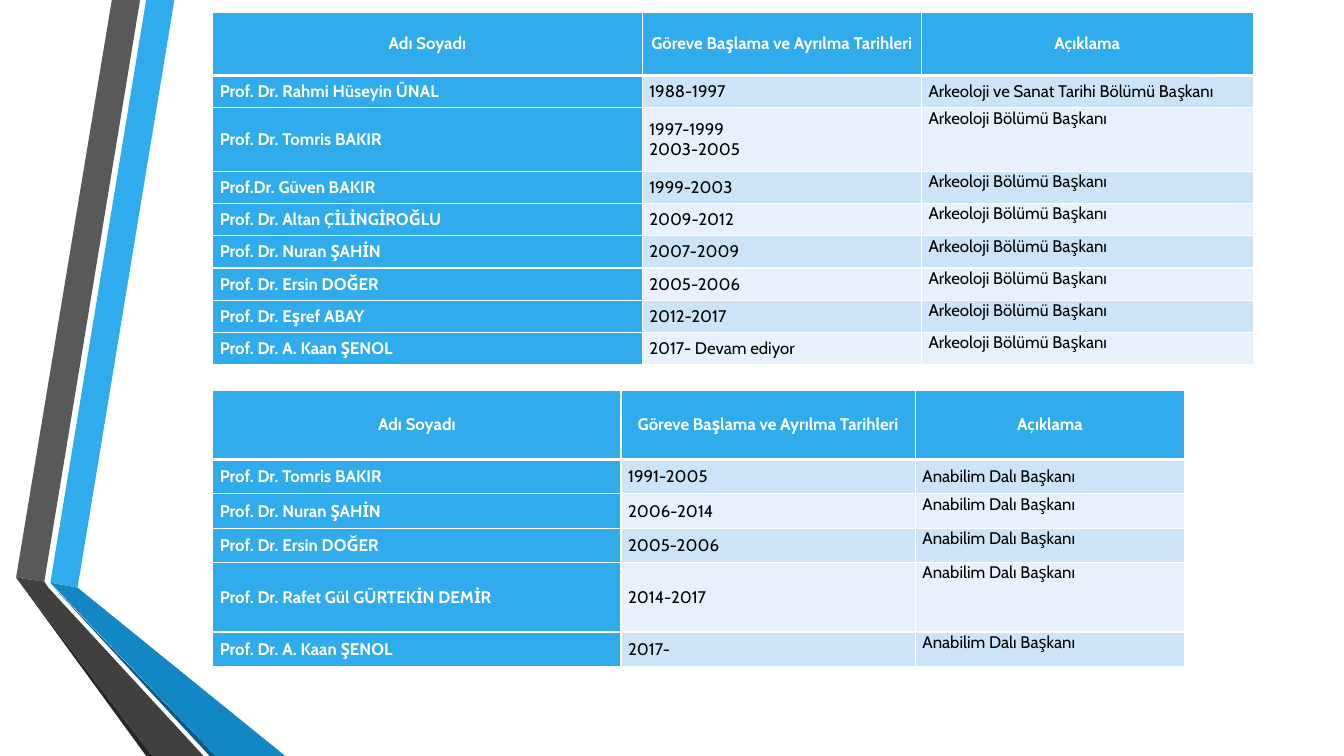
"""Build a slide with two tables of department and division heads."""
from lxml import etree
from pptx import Presentation
from pptx import util as u
from pptx.dml.color import RGBColor
from pptx.enum import text
from pptx.oxml import ns

THEME = dict(font="Cabin", size=12, after=6, inset=0.07, rule=1, header_rule=3,
             accent="30ACEC", bands=("CDE3F8", "E8F1FB"), light="FFFFFF", dark="000000")

RIBBONS = [
    ("30ACEC", [(0.5, 5.78), (0.77, 5.83), (1.73, 0), (1.45, 0)]),
    ("595959", [(1.39, 0), (1.11, 0), (0.16, 5.73), (0.44, 5.77)]),
    ("262626", [(0.16, 5.73), (1.45, 7.5), (1.51, 7.5)]),
    ("0C5A82", [(0.5, 5.79), (2.08, 7.5), (2.14, 7.5)]),
    ("1287C3", [(0.5, 5.78), (2.14, 7.5), (2.83, 7.5), (0.77, 5.83)]),
    ("404040", [(2.02, 7.5), (0.48, 5.83), (0.44, 5.77), (0.16, 5.73), (1.51, 7.5)]),
]

HEADER = ("Adı Soyadı", "Göreve Başlama ve Ayrılma Tarihleri", "Açıklama")
DEPARTMENT = "Arkeoloji Bölümü Başkanı"
DIVISION = "Anabilim Dalı Başkanı"
TABLES = [
    dict(left=2.11, top=0.12, cols=(4.26, 2.77, 3.29), row=0.32, tall_row=0.63, tall=(0, 2), rows=[
        HEADER,
        ("Prof. Dr. Rahmi Hüseyin ÜNAL", "1988-1997", "Arkeoloji ve Sanat Tarihi Bölümü Başkanı"),
        ("Prof. Dr. Tomris BAKIR", "1997-1999\n2003-2005", DEPARTMENT),
        ("Prof.Dr. Güven BAKIR", "1999-2003", DEPARTMENT),
        ("Prof. Dr. Altan ÇİLİNGİROĞLU", "2009-2012", DEPARTMENT),
        ("Prof. Dr. Nuran ŞAHİN", "2007-2009", DEPARTMENT),
        ("Prof. Dr. Ersin DOĞER", "2005-2006", DEPARTMENT),
        ("Prof. Dr. Eşref ABAY", "2012-2017", DEPARTMENT),
        ("Prof. Dr. A. Kaan ŞENOL", "2017- Devam ediyor", DEPARTMENT),
    ]),
    dict(left=2.11, top=3.87, cols=(4.05, 2.92, 2.67), row=0.34, tall_row=0.69, tall=(0, 4), rows=[
        HEADER,
        ("Prof. Dr. Tomris BAKIR", "1991-2005", DIVISION),
        ("Prof. Dr. Nuran ŞAHİN", "2006-2014", DIVISION),
        ("Prof. Dr. Ersin DOĞER", "2005-2006", DIVISION),
        ("Prof. Dr. Rafet Gül GÜRTEKİN DEMİR", "2014-2017", DIVISION),
        ("Prof. Dr. A. Kaan ŞENOL", "2017-", DIVISION),
    ]),
]


def set_all(obj, values):
    for name, value in values.items():
        setattr(obj, name, value)


def paint(fill, color):
    fill.solid()
    fill.fore_color.rgb = RGBColor.from_string(color)


def add_ribbon(s, color, points):
    start, *rest = [(u.Inches(x), u.Inches(y)) for x, y in points]
    builder = s.shapes.build_freeform(*start)
    builder.add_line_segments(rest, close=True)
    sp = builder.convert_to_shape()
    sp.shadow.inherit = False
    sp.line.fill.background()
    paint(sp.fill, color)


def add_borders(cell, row):
    widths = dict(L=THEME["rule"], R=THEME["rule"],
                  T=THEME["header_rule" if row == 1 else "rule"],
                  B=THEME["header_rule" if row == 0 else "rule"])
    tc_pr = cell._tc.get_or_add_tcPr()
    for side, width in widths.items():
        ln = etree.SubElement(tc_pr, ns.qn(f"a:ln{side}"), w=str(u.Pt(width)))
        fill = etree.SubElement(ln, ns.qn("a:solidFill"))
        etree.SubElement(fill, ns.qn("a:srgbClr"), val=THEME["light"])


def fill_cell(cell, row, col, content):
    strong = row == 0 or col == 0
    top_anchored = col == 2 and row > 1
    inset = u.Inches(THEME["inset"])
    add_borders(cell, row)
    paint(cell.fill, THEME["accent"] if strong else THEME["bands"][(row - 1) % 2])
    set_all(cell, dict(
        margin_left=inset, margin_right=inset, margin_top=0, margin_bottom=0, text=content,
        vertical_anchor=text.MSO_ANCHOR.TOP if top_anchored else text.MSO_ANCHOR.MIDDLE))
    lines = cell.text_frame.paragraphs
    for p in lines:
        p.alignment = text.PP_ALIGN.CENTER if row == 0 else text.PP_ALIGN.LEFT
        p.space_after = u.Pt(THEME["after"] if len(lines) == 1 else 0)
        for r in p.runs:
            set_all(r.font, dict(name=THEME["font"], size=u.Pt(THEME["size"]), bold=strong))
            r.font.color.rgb = RGBColor.from_string(THEME["light" if strong else "dark"])


def add_heads_table(s, left, top, cols, row, tall_row, tall, rows):
    heights = [tall_row if i in tall else row for i in range(len(rows))]
    box = [u.Inches(n) for n in (left, top, sum(cols), sum(heights))]
    table = s.shapes.add_table(len(rows), len(cols), *box).table
    set_all(table, dict(first_row=False, horz_banding=False))
    for column, width in zip(table.columns, cols):
        column.width = u.Inches(width)
    for i, (height, contents) in enumerate(zip(heights, rows)):
        table.rows[i].height = u.Inches(height)
        for j, content in enumerate(contents):
            fill_cell(table.cell(i, j), i, j, content)


def main():
    prs = Presentation()
    set_all(prs, dict(slide_width=u.Inches(13.33), slide_height=u.Inches(7.5)))
    s = prs.slides.add_slide(prs.slide_layouts[6])
    for color, points in RIBBONS:
        add_ribbon(s, color, points)
    for heads in TABLES:
        add_heads_table(s, **heads)
    prs.save("out.pptx")


if __name__ == "__main__":
    main()
